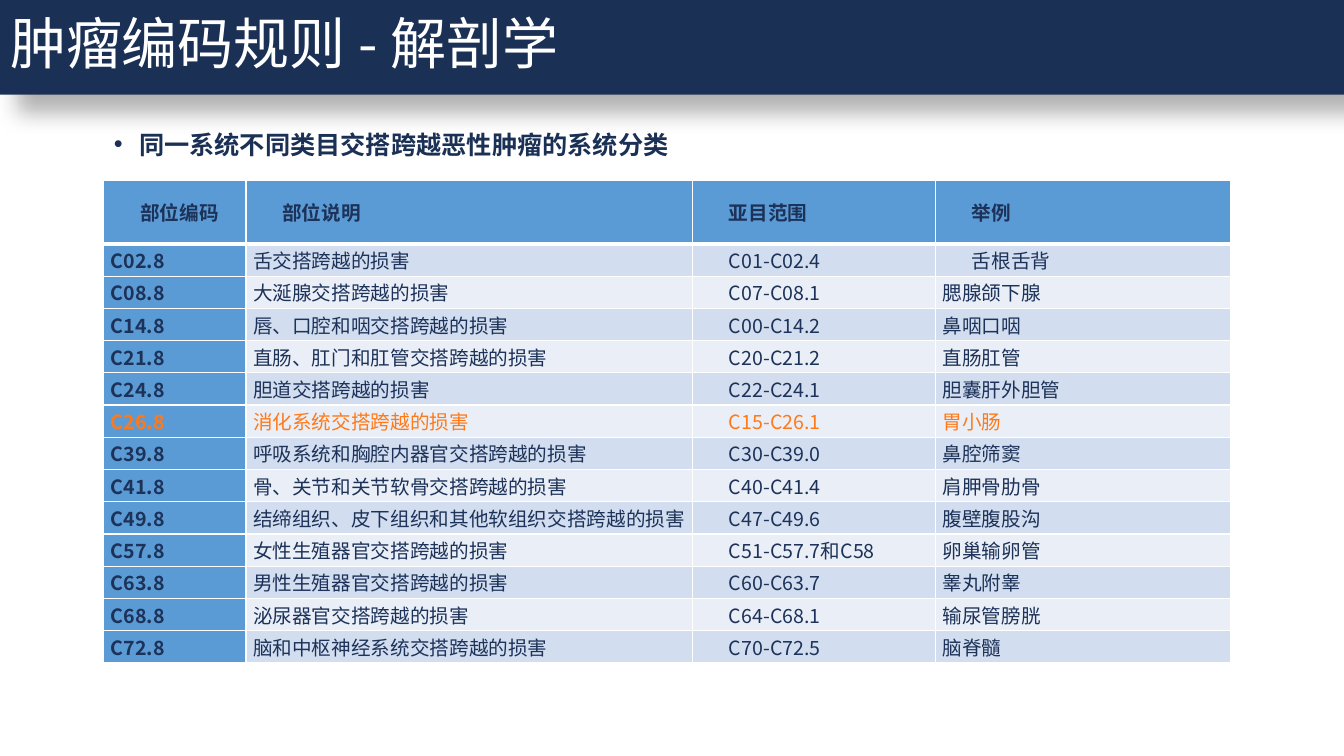
from dataclasses import dataclass

from lxml.etree import SubElement
from pptx import Presentation
from pptx.dml.color import RGBColor as Rgb
from pptx.enum.text import MSO_ANCHOR as Anchor, MSO_AUTO_SIZE as AutoSize, PP_ALIGN as Align
from pptx.oxml.ns import qn
from pptx.util import Inches, Pt


@dataclass(frozen=True)
class Theme:
    font: str = "Noto Sans CJK SC"
    navy: str = "1B3055"
    ink: str = "1D3259"
    white: str = "FFFFFF"
    accent: str = "FF7919"
    blue: str = "5B9BD5"
    bands: tuple = ("D2DEEF", "EAEFF7")
    title_size: int = 40
    body_size: int = 18
    table_size: int = 14


THEME = Theme()
PAGE_WIDTH, PAGE_HEIGHT = 13.33, 7.5
COLUMNS = (1.41, 4.43, 2.41, 2.93)
HEADER_HEIGHT, ROW_HEIGHT = 0.63, 0.32
CELL_INDENT = 0.29
HIGHLIGHTED_CODE = "C26.8"

HEADERS = ("部位编码", "部位说明", "亚目范围", "举例")
SITES = (
    ("C02.8", "舌交搭跨越的损害", "C01-C02.4", "舌根舌背"),
    ("C08.8", "大涎腺交搭跨越的损害", "C07-C08.1", "腮腺颌下腺"),
    ("C14.8", "唇、口腔和咽交搭跨越的损害", "C00-C14.2", "鼻咽口咽"),
    ("C21.8", "直肠、肛门和肛管交搭跨越的损害", "C20-C21.2", "直肠肛管"),
    ("C24.8", "胆道交搭跨越的损害", "C22-C24.1", "胆囊肝外胆管"),
    ("C26.8", "消化系统交搭跨越的损害", "C15-C26.1", "胃小肠"),
    ("C39.8", "呼吸系统和胸腔内器官交搭跨越的损害", "C30-C39.0", "鼻腔筛窦"),
    ("C41.8", "骨、关节和关节软骨交搭跨越的损害", "C40-C41.4", "肩胛骨肋骨"),
    ("C49.8", "结缔组织、皮下组织和其他软组织交搭跨越的损害", "C47-C49.6", "腹壁腹股沟"),
    ("C57.8", "女性生殖器官交搭跨越的损害", "C51-C57.7和C58", "卵巢输卵管"),
    ("C63.8", "男性生殖器官交搭跨越的损害", "C60-C63.7", "睾丸附睾"),
    ("C68.8", "泌尿器官交搭跨越的损害", "C64-C68.1", "输尿管膀胱"),
    ("C72.8", "脑和中枢神经系统交搭跨越的损害", "C70-C72.5", "脑脊髓"),
)


def style_text(para, size, color, bold=False):
    font = para.font
    font.size, font.bold = Pt(size), bold
    font.color.rgb = Rgb.from_string(color)
    font.name = THEME.font
    defaults = para._p.get_or_add_pPr().find(qn("a:defRPr"))
    SubElement(defaults, qn("a:ea"), typeface=THEME.font)


def paint(shape, color):
    shape.fill.solid()
    shape.fill.fore_color.rgb = Rgb.from_string(color)


def place(shape, box):
    shape.left, shape.top, shape.width, shape.height = (Inches(length) for length in box)


def add_shadow(shape, blur, distance, angle, opacity):
    effects = SubElement(shape._element.spPr, qn("a:effectLst"))
    shadow = SubElement(effects, qn("a:outerShdw"), blurRad=str(Pt(blur)), dist=str(Pt(distance)),
                        dir=str(angle * 60000), algn="tl", rotWithShape="0")
    color = SubElement(shadow, qn("a:srgbClr"), val="000000")
    SubElement(color, qn("a:alpha"), val=str(opacity * 1000))


def fill_title(title, box):
    place(title, box)
    paint(title, THEME.navy)
    add_shadow(title, blur=15, distance=18, angle=45, opacity=30)
    frame = title.text_frame
    frame.text = "肿瘤编码规则 - 解剖学"
    frame.auto_size, frame.vertical_anchor = AutoSize.NONE, Anchor.MIDDLE
    para = frame.paragraphs[0]
    para.alignment, para.line_spacing = Align.LEFT, 0.9
    style_text(para, THEME.title_size, THEME.white)


def fill_body(body, box):
    place(body, box)
    frame = body.text_frame
    frame.text = "同一系统不同类目交搭跨越恶性肿瘤的系统分类"
    frame.auto_size, frame.vertical_anchor = AutoSize.NONE, Anchor.TOP
    para = frame.paragraphs[0]
    para.line_spacing, para.space_before = 1.5, Pt(0)
    properties = para._p.get_or_add_pPr()
    properties.set("marL", str(Inches(0.25)))
    properties.set("indent", str(Inches(-0.25)))
    SubElement(properties, qn("a:buFont"), typeface="Arial")
    SubElement(properties, qn("a:buChar"), char="•")
    style_text(para, THEME.body_size, THEME.navy, bold=True)


def add_borders(cell, bottom):
    properties = cell._tc.get_or_add_tcPr()
    for side, width in (("L", 1), ("R", 1), ("T", 1), ("B", bottom)):
        line = SubElement(properties, qn(f"a:ln{side}"), w=str(Pt(width)))
        fill = SubElement(line, qn("a:solidFill"))
        SubElement(fill, qn("a:srgbClr"), val=THEME.white)


def fill_cell(cell, text, row, column, color):
    is_header = row == 0
    is_label = is_header or column == 0
    # The first example is indented like the header and the code ranges
    indented = is_header or column == 2 or (row, column) == (1, 3)
    add_borders(cell, bottom=3 if is_header else 1)
    paint(cell, THEME.blue if is_label else THEME.bands[(row - 1) % 2])
    cell.margin_left = cell.margin_right = Inches(0.07)
    cell.margin_top = cell.margin_bottom = 0
    cell.vertical_anchor = Anchor.MIDDLE
    cell.text = text
    para = cell.text_frame.paragraphs[0]
    para.alignment = Align.JUSTIFY if is_label or indented else Align.LEFT
    if indented:
        para._p.get_or_add_pPr().set("indent", str(Inches(CELL_INDENT)))
    style_text(para, THEME.table_size, color, bold=is_label)


def add_site_table(page, left, top):
    rows = (HEADERS, *SITES)
    height = HEADER_HEIGHT + ROW_HEIGHT * len(SITES)
    table = page.shapes.add_table(len(rows), len(COLUMNS), Inches(left), Inches(top),
                                  Inches(sum(COLUMNS)), Inches(height)).table
    for column, width in zip(table.columns, COLUMNS):
        column.width = Inches(width)
    for row, texts in enumerate(rows):
        table.rows[row].height = Inches(ROW_HEIGHT if row else HEADER_HEIGHT)
        color = THEME.accent if texts[0] == HIGHLIGHTED_CODE else THEME.ink
        for column, text in enumerate(texts):
            fill_cell(table.cell(row, column), text, row, column, color)


def main():
    deck = Presentation()
    deck.slide_width, deck.slide_height = Inches(PAGE_WIDTH), Inches(PAGE_HEIGHT)
    page = deck.slides.add_slide(deck.slide_layouts[1])
    left = 1.03

    # Title band
    fill_title(page.shapes.title, (0, -0.03, PAGE_WIDTH, 0.97))
    # Lead bullet
    fill_body(page.placeholders[1], (left, 1.08, sum(COLUMNS), 4.9))
    # Site classification
    add_site_table(page, left, 1.79)

    deck.save("out.pptx")


if __name__ == "__main__":
    main()
